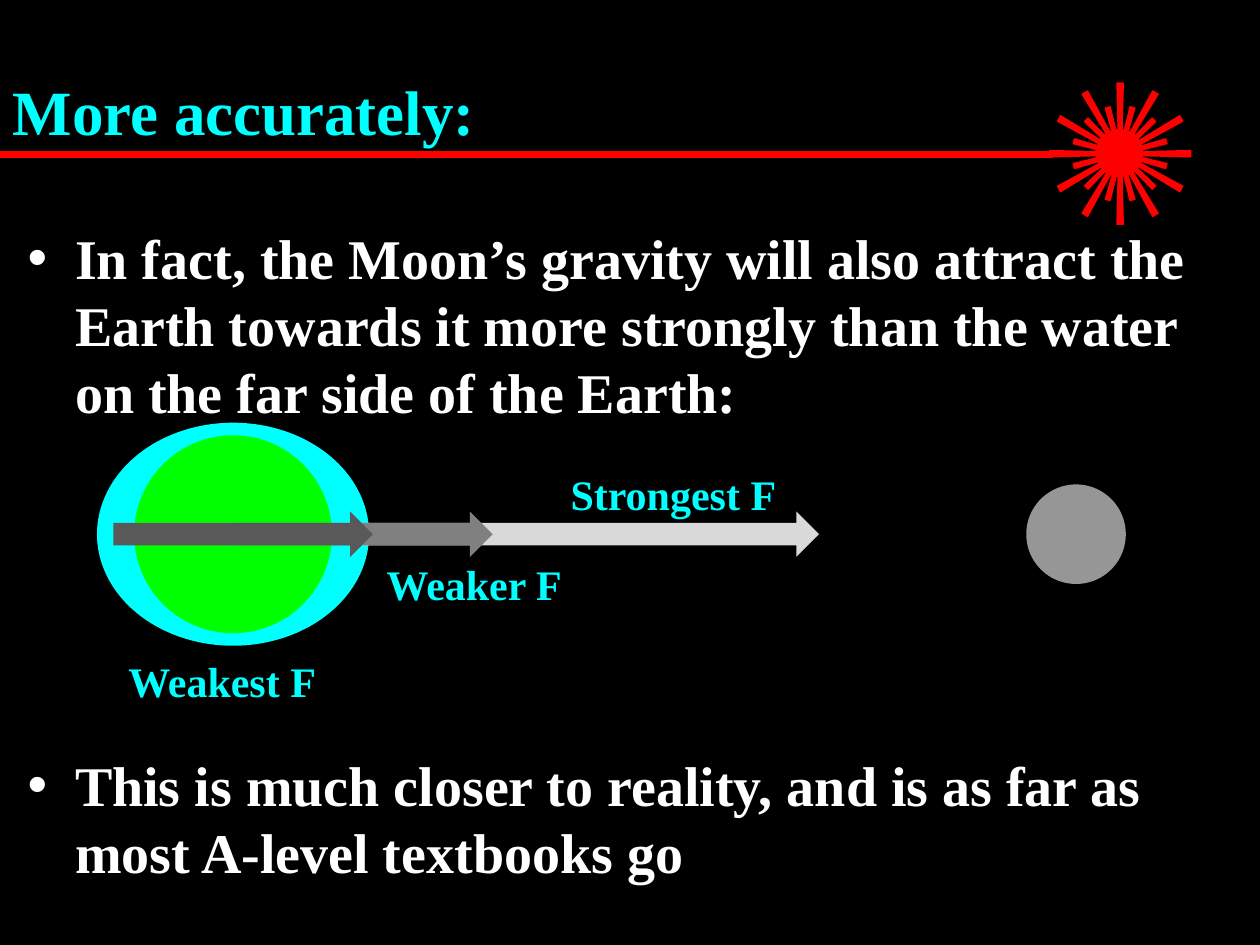
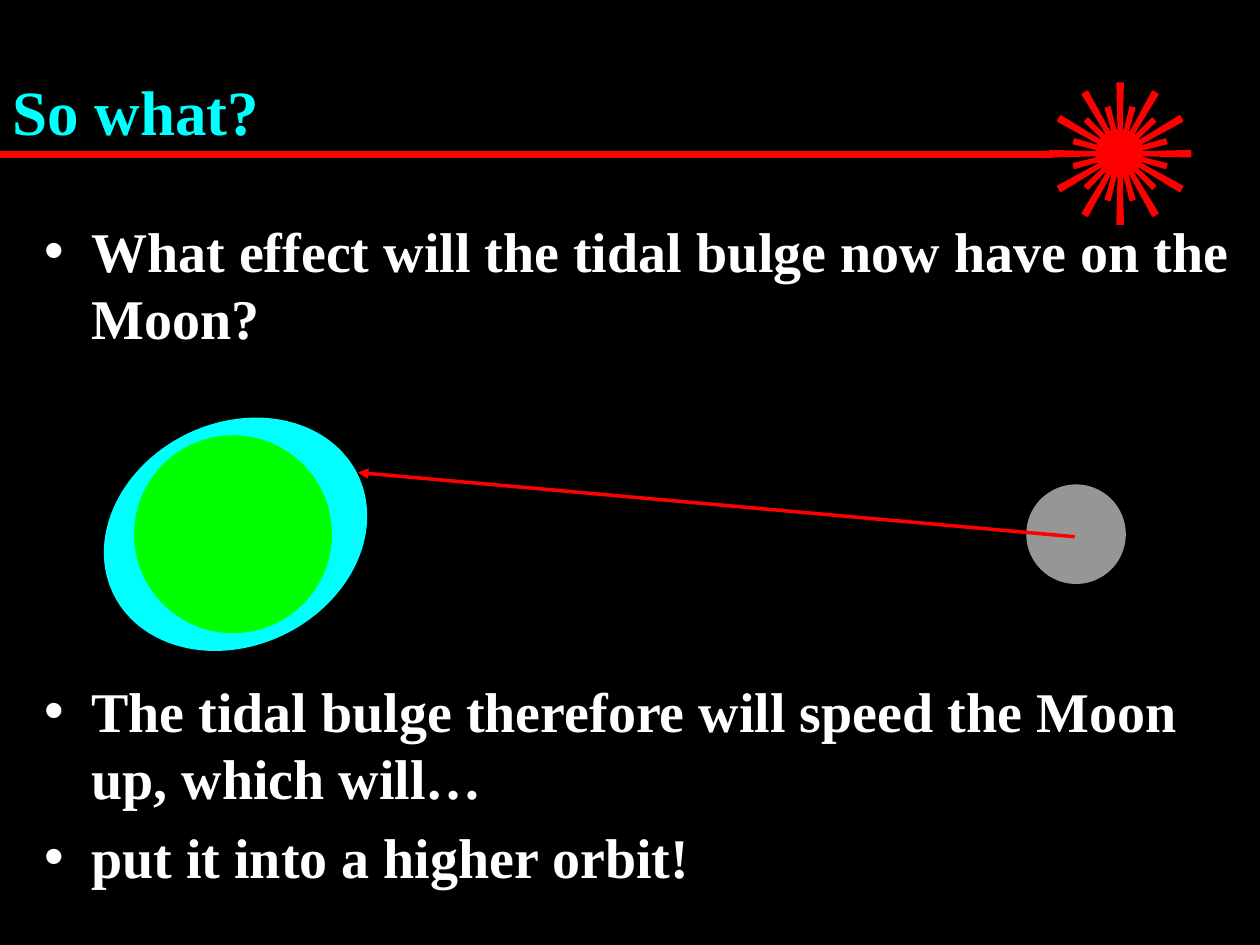
from math import cos, radians, sin

from lxml import etree
from pptx import Presentation
from pptx.dml.color import RGBColor
from pptx.enum.shapes import MSO_CONNECTOR, MSO_SHAPE
from pptx.enum.text import MSO_ANCHOR, MSO_AUTO_SIZE, PP_ALIGN
from pptx.oxml.ns import qn
from pptx.util import Inches, Pt

OVAL, RECT, ARROW = MSO_SHAPE.OVAL, MSO_SHAPE.RECTANGLE, MSO_SHAPE.RIGHT_ARROW
STRAIGHT = MSO_CONNECTOR.STRAIGHT
LEFT, MIDDLE, TOP = PP_ALIGN.LEFT, MSO_ANCHOR.MIDDLE, MSO_ANCHOR.TOP
NO_FIT = MSO_AUTO_SIZE.NONE

BLACK = RGBColor(0x00, 0x00, 0x00)
WHITE = RGBColor(0xFF, 0xFF, 0xFF)
RED = RGBColor(0xFF, 0x00, 0x00)
CYAN = RGBColor(0x00, 0xFF, 0xFF)
GREEN = RGBColor(0x00, 0xFF, 0x00)
MOON_GREY = RGBColor(0x96, 0x96, 0x96)
LIGHT_GREY = RGBColor(0xD9, 0xD9, 0xD9)
MID_GREY = RGBColor(0x80, 0x80, 0x80)
DARK_GREY = RGBColor(0x59, 0x59, 0x59)

FONT = "Times New Roman"
W, H = 10, 7.5
AXIS = 4.24                # height of the line through Earth and Moon
EARTH_X, MOON_X = 1.85, 8.54
SUN_X, SUN_Y = 8.89, 1.22
DIAGRAM_GAP = 186          # points left between bullets for the diagram


def write(p, text, size=32, color=WHITE, before=None):
    """Put formatted text in a paragraph."""
    r = p.add_run()
    r.text = text
    r.font.name, r.font.size, r.font.bold = FONT, Pt(size), True
    r.font.color.rgb = color
    p.alignment = LEFT
    if before is not None:
        p.space_before = Pt(before)


def paint(sp, color, outline=False):
    """Give a shape a flat fill, with a thin outline if asked."""
    sp.shadow.inherit = False
    sp.fill.solid()
    sp.fill.fore_color.rgb = color
    if outline:
        sp.line.color.rgb = color
        sp.line.width = Pt(0.75)
    else:
        sp.line.fill.background()
    return sp


slides = [
    dict(title="More accurately:", body=(0.12, 1.72), bulge=(EARTH_X, 0),
         bullets=[("In fact, the Moon’s gravity will also attract the Earth towards it "
                   "more strongly than the water on the far side of the Earth:", None),
                  ("This is much closer to reality, and is as far as most A-level "
                   "textbooks go", DIAGRAM_GAP)],
         # left, width, colour, label, label left, top and width
         forces=[(2.81, 3.69, LIGHT_GREY, "Strongest F", 4.43, 3.67, 1.96),
                 (1.85, 2.06, MID_GREY, "Weaker F", 2.97, 4.38, 1.59),
                 (0.9, 2.06, DARK_GREY, "Weakest F", 0.92, 5.15, 2)],
         pull=None),
    dict(title="So what?", body=(0.25, 1.67), bulge=(1.87, -26.1),
         bullets=[("What effect will the tidal bulge now have on the Moon?", None),
                  ("The tidal bulge therefore will speed the Moon up, which will…",
                   DIAGRAM_GAP),
                  ("put it into a higher orbit!", None)],
         forces=[],
         pull=(8.53, 4.26, 2.84, 3.75)),
]

prs = Presentation()
prs.slide_width, prs.slide_height = Inches(W), Inches(H)

for content in slides:
    s = prs.slides.add_slide(prs.slide_layouts[1])
    s.background.fill.solid()
    s.background.fill.fore_color.rgb = BLACK
    shapes = s.shapes

    # Red sunburst: long rays alternate with short ones
    paint(shapes.add_shape(OVAL, Inches(SUN_X - 0.19), Inches(SUN_Y - 0.19),
                           Inches(0.37), Inches(0.37)), RED, outline=True)
    for i in range(24):
        a = radians(15 * i)
        inner, outer, tip = (0.14, 0.38, 0.02) if i % 2 else (0.15, 0.56, 0.025)
        corners = [(-tip, outer), (tip, outer), (0.015, inner), (-0.015, inner)]
        points = [(Inches(SUN_X + x * cos(a) + y * sin(a)),
                   Inches(SUN_Y + x * sin(a) - y * cos(a))) for x, y in corners]
        ray = shapes.build_freeform(*points[0])
        ray.add_line_segments(points[1:], close=True)
        paint(ray.convert_to_shape(), RED, outline=True)

    # Rule under the title
    paint(shapes.add_shape(RECT, 0, Inches(1.2), Inches(8.35), Inches(0.05)),
          RED, outline=True)

    # Title
    sp = shapes.title
    sp.left, sp.top, sp.width, sp.height = 0, Inches(0.25), Inches(8.5), Inches(1.25)
    sp.text_frame.vertical_anchor = MIDDLE
    write(sp.text_frame.paragraphs[0], content["title"], size=36, color=CYAN)

    # Bullets above and below the diagram
    sp = s.placeholders[1]
    left, top = content["body"]
    sp.left, sp.top, sp.width, sp.height = (Inches(v) for v in (left, top, 9.75, 5.58))
    tf = sp.text_frame
    tf.auto_size, tf.vertical_anchor = NO_FIT, TOP
    for i, (text, before) in enumerate(content["bullets"]):
        p = tf.add_paragraph() if i else tf.paragraphs[0]
        write(p, text, before=before)

    # Tidal bulge, Earth and Moon, each set by its centre
    bulge_x, tilt = content["bulge"]
    for x, width, height, color, angle in [(bulge_x, 2.16, 1.77, CYAN, tilt),
                                           (EARTH_X, 1.57, 1.57, GREEN, 0),
                                           (MOON_X, 0.79, 0.79, MOON_GREY, 0)]:
        sp = shapes.add_shape(OVAL, Inches(x - width / 2), Inches(AXIS - height / 2),
                              Inches(width), Inches(height))
        paint(sp, color).rotation = angle

    # Force arrows and their labels
    for left, width, color, text, label_x, label_y, label_w in content["forces"]:
        paint(shapes.add_shape(ARROW, Inches(left), Inches(AXIS - 0.18),
                               Inches(width), Inches(0.36)), color)
        tf = shapes.add_textbox(Inches(label_x), Inches(label_y),
                                Inches(label_w), Inches(0.5)).text_frame
        tf.word_wrap = True
        write(tf.paragraphs[0], text, size=24, color=CYAN)

    # Pull between the Moon and the bulge
    if content["pull"]:
        line = shapes.add_connector(STRAIGHT, *(Inches(v) for v in content["pull"]))
        line.line.color.rgb, line.line.width = RED, Pt(2)
        etree.SubElement(line.line._get_or_add_ln(), qn("a:tailEnd"), type="triangle")
        etree.SubElement(line._element.spPr, qn("a:effectLst"))

prs.save("out.pptx")
